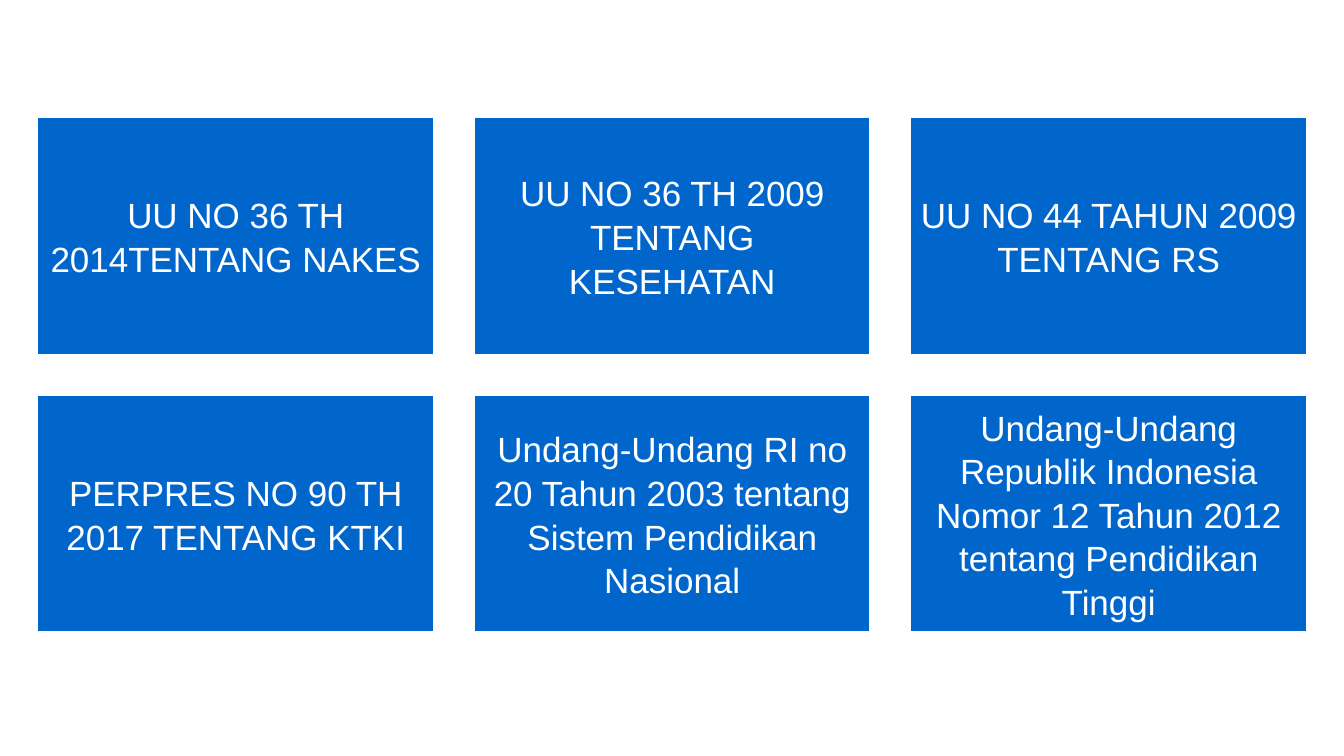
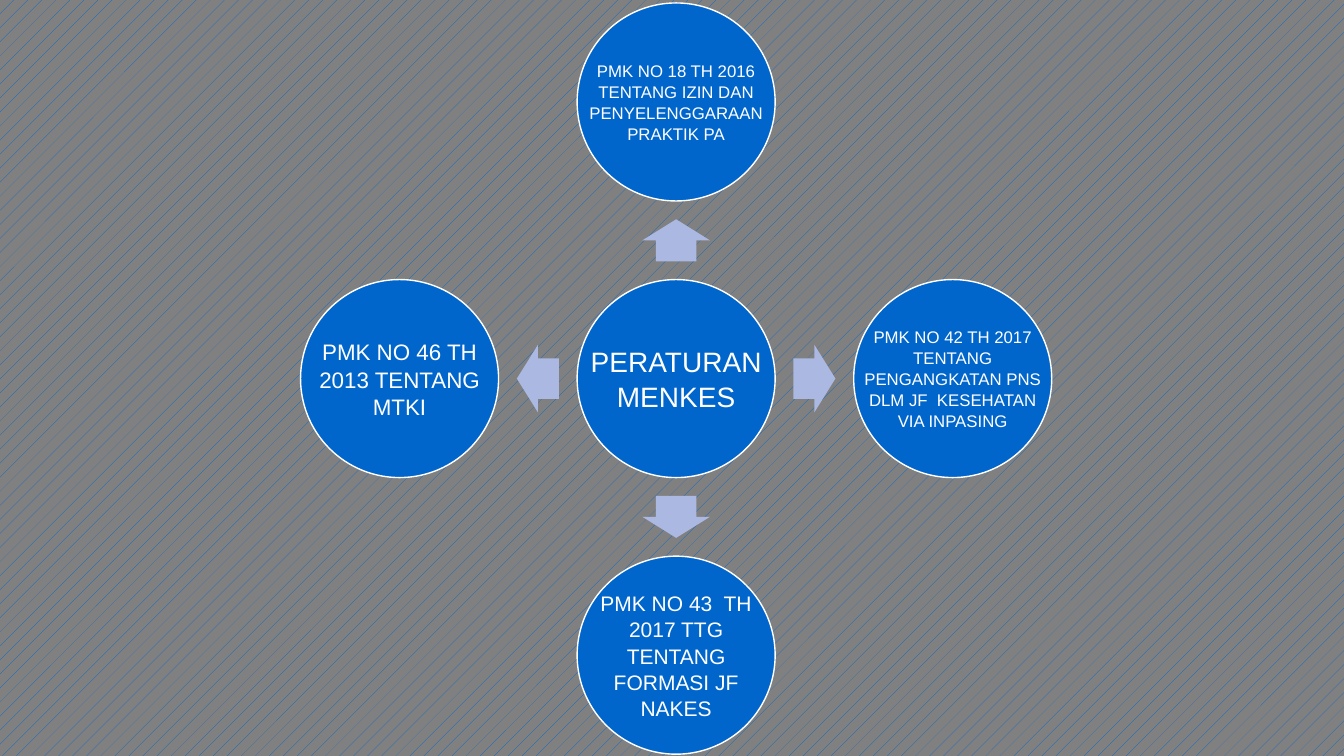
"""Build two slides: a grid of laws and a radial map of ministry rules."""
from pptx import Presentation
from pptx.dml.color import RGBColor
from pptx.enum.dml import MSO_PATTERN
from pptx.enum.shapes import MSO_SHAPE
from pptx.enum.text import MSO_ANCHOR, PP_ALIGN
from pptx.util import Cm, Pt

BLUE = RGBColor(0x00, 0x66, 0xCC)
PALE = RGBColor(0xAB, 0xB8, 0xE2)
GRAY = RGBColor(0x80, 0x80, 0x80)
WHITE = RGBColor(0xFF, 0xFF, 0xFF)
RECT, OVAL, ARROW = MSO_SHAPE.RECTANGLE, MSO_SHAPE.OVAL, MSO_SHAPE.RIGHT_ARROW
MIDDLE, CENTER = MSO_ANCHOR.MIDDLE, PP_ALIGN.CENTER
DOTS = MSO_PATTERN.PERCENT_5
FONT = "Arial"


def write(shape, text, size, inset):
    frame = shape.text_frame
    frame.word_wrap = True
    frame.vertical_anchor = MIDDLE
    frame.margin_left = frame.margin_right = Cm(inset)
    frame.margin_top = frame.margin_bottom = Cm(inset)
    par = frame.paragraphs[0]
    par.alignment = CENTER
    par.line_spacing = 1.04
    run = par.add_run()
    run.text = text
    run.font.name = FONT
    run.font.size = Pt(size)
    run.font.color.rgb = WHITE


def draw(slide, kind, box, fill, line=None):
    shape = slide.shapes.add_shape(kind, *map(Cm, box))
    shape.shadow.inherit = False
    shape.fill.solid()
    shape.fill.fore_color.rgb = fill
    if line is None:
        shape.line.fill.background()
    else:
        shape.line.color.rgb = line
        shape.line.width = Pt(1)
    return shape


deck = Presentation()
deck.slide_width, deck.slide_height = Cm(33.87), Cm(19.05)
blank = deck.slide_layouts[6]

slide = deck.slides.add_slide(blank)
back = slide.background.fill
back.solid()
back.fore_color.rgb = WHITE
laws = [
    "UU NO 36 TH 2014TENTANG NAKES",
    "UU NO 36 TH 2009 TENTANG KESEHATAN",
    "UU NO 44 TAHUN 2009 TENTANG RS",
    "PERPRES NO 90 TH 2017 TENTANG KTKI",
    "Undang-Undang RI no 20 Tahun 2003 tentang Sistem Pendidikan Nasional",
    "Undang-Undang Republik Indonesia Nomor 12 Tahun 2012 tentang Pendidikan Tinggi",
]
wide, high, gap = 9.98, 5.98, 1.02
for i, law in enumerate(laws):
    row, col = divmod(i, 3)
    box = (0.95 + col * (wide + gap), 2.95 + row * (high + gap), wide, high)
    write(draw(slide, RECT, box, BLUE, WHITE), law, size=25, inset=0.24)

slide = deck.slides.add_slide(blank)
back = slide.background.fill
back.patterned()
back.pattern = DOTS
back.fore_color.rgb = BLUE
back.back_color.rgb = GRAY
mid_x, mid_y, step, disc = 17.04, 9.54, 6.97, 4.99
long, broad = 1.06, 1.7
rules = [
    ("PERATURAN MENKES", 20, 0, 0, None),
    ("PMK NO 18 TH 2016 TENTANG IZIN DAN PENYELENGGARAAN PRAKTIK PA", 12, 0, -1, 270),
    ("PMK NO 42 TH 2017 TENTANG PENGANGKATAN PNS DLM JF  KESEHATAN VIA INPASING", 12, 1, 0, 0),
    ("PMK NO 43  TH 2017 TTG TENTANG FORMASI JF NAKES", 15, 0, 1, 90),
    ("PMK NO 46 TH 2013 TENTANG MTKI", 16, -1, 0, 180),
]
for text, size, dx, dy, turn in rules:
    if turn is not None:
        left = mid_x + dx * step / 2 - long / 2
        top = mid_y + dy * step / 2 - broad / 2
        arrow = draw(slide, ARROW, (left, top, long, broad), PALE)
        arrow.adjustments[0], arrow.adjustments[1] = 0.6, 0.5
        arrow.rotation = turn
    box = (mid_x + dx * step - disc / 2, mid_y + dy * step - disc / 2, disc, disc)
    draw(slide, OVAL, box, BLUE, WHITE)
    write(slide.shapes.add_textbox(*map(Cm, box)), text, size=size, inset=0.05)

deck.save("out.pptx")
